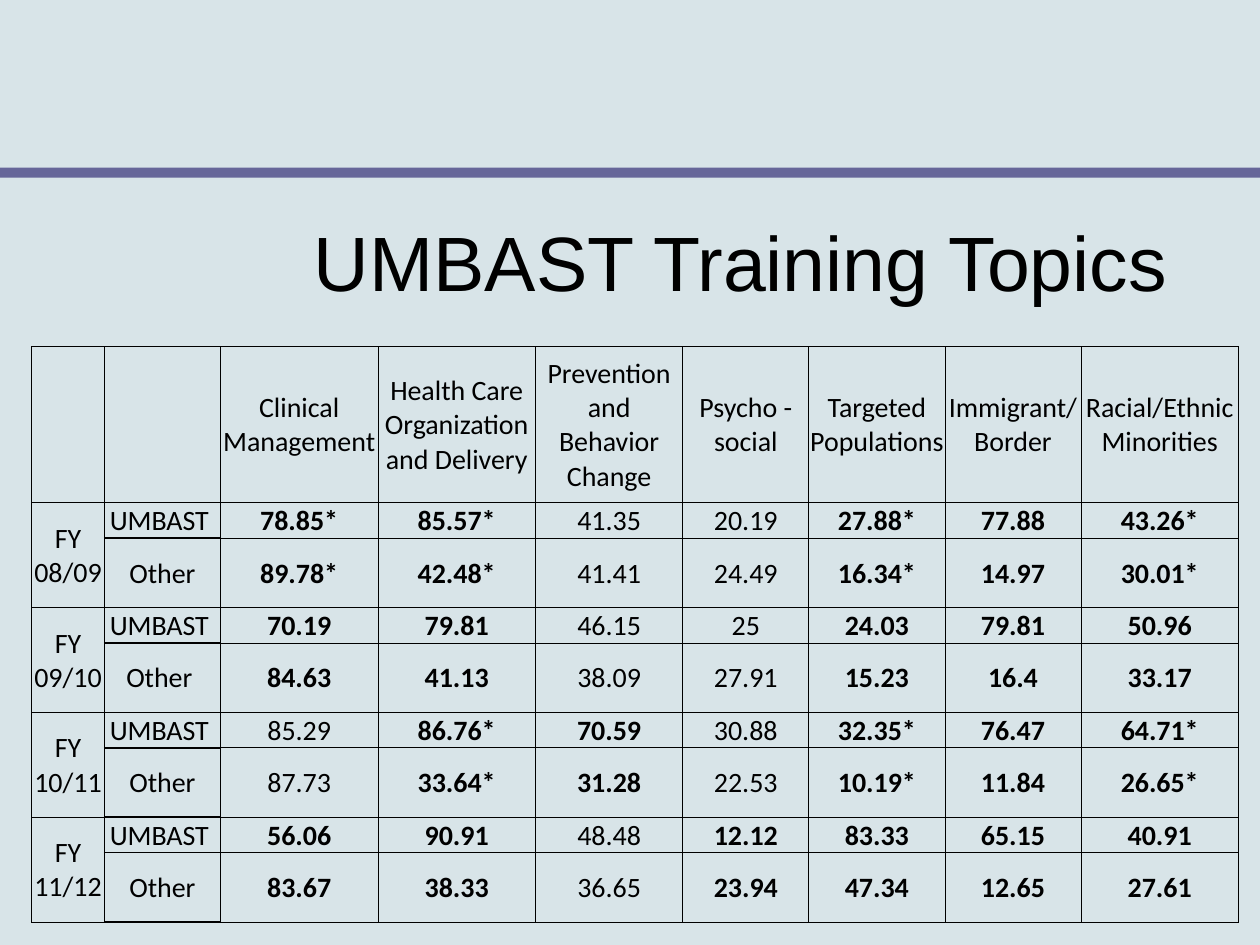
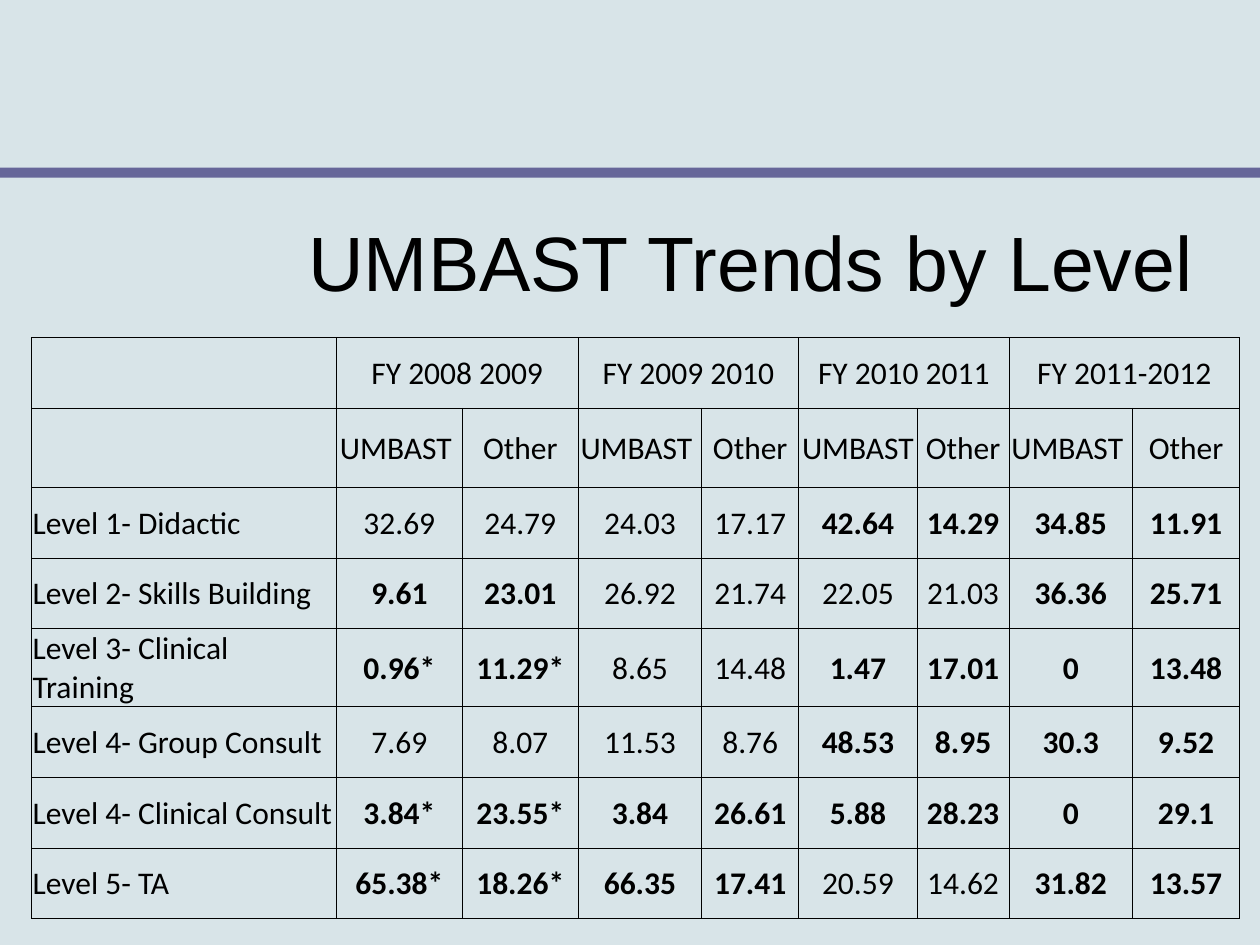
from lxml.etree import SubElement
from pptx import Presentation
from pptx.dml.color import RGBColor as RGB
from pptx.enum.shapes import MSO_SHAPE as SHAPE
from pptx.enum.text import MSO_ANCHOR as ANCHOR, PP_ALIGN as ALIGN
from pptx.oxml.ns import qn
from pptx.util import Inches, Pt

COLORS = {"background": "D8E4E8", "band": "666699", "ink": "000000"}
TITLE_FONT, TABLE_FONT = "Arial", "Calibri"
THIN, THICK = 0.5, 1

TOPICS = ["Clinical Management", "Health Care Organization and Delivery",
          "Prevention and Behavior Change", "Psycho - social",
          "Targeted Populations", "Immigrant/ Border", "Racial/Ethnic Minorities"]

# A leading "!" marks a bold value.
TOPIC_ROWS = [
    ("FY 08/09", "UMBAST ", "!78.85* !85.57* 41.35 20.19 !27.88* !77.88 !43.26*"),
    ("", "Other", "!89.78* !42.48* 41.41 24.49 !16.34* !14.97 !30.01*"),
    ("FY 09/10", "UMBAST ", "!70.19 !79.81 46.15 25 !24.03 !79.81 !50.96"),
    ("", "Other ", "!84.63 !41.13 38.09 27.91 !15.23 !16.4 !33.17"),
    ("FY 10/11", "UMBAST ", "85.29 !86.76* !70.59 30.88 !32.35* !76.47 !64.71*"),
    ("", "Other", "87.73 !33.64* !31.28 22.53 !10.19* !11.84 !26.65*"),
    ("FY 11/12", "UMBAST ", "!56.06 !90.91 48.48 !12.12 !83.33 !65.15 !40.91"),
    ("", "Other", "!83.67 !38.33 36.65 !23.94 !47.34 !12.65 !27.61"),
]

YEARS = ["FY 2008 2009", "FY 2009 2010", "FY 2010 2011", "FY 2011-2012"]

LEVEL_ROWS = [
    ("Level 1- Didactic", "32.69 24.79 24.03 17.17 !42.64 !14.29 !34.85 !11.91"),
    ("Level 2- Skills Building", "!9.61 !23.01 26.92 21.74 22.05 21.03 !36.36 !25.71"),
    ("Level 3- Clinical Training", "!0.96* !11.29* 8.65 14.48 !1.47 !17.01 !0 !13.48"),
    ("Level 4- Group Consult", "7.69 8.07 11.53 8.76 !48.53 !8.95 !30.3 !9.52"),
    ("Level 4- Clinical Consult", "!3.84* !23.55* !3.84 !26.61 !5.88 !28.23 !0 !29.1"),
    ("Level 5- TA", "!65.38* !18.26* !66.35 !17.41 20.59 14.62 !31.82 !13.57"),
]


def write(tf, text, size, font, bold=False, align=ALIGN.CENTER):
    p = tf.paragraphs[0]
    p.alignment = align
    r = p.add_run()
    r.text = text
    r.font.size = Pt(size)
    r.font.name = font
    r.font.bold = bold
    r.font.color.rgb = RGB.from_string(COLORS["ink"])


class Deck:
    def __init__(self):
        self.prs = Presentation()
        self.prs.slide_width, self.prs.slide_height = Inches(10), Inches(7.5)
        self.master = self.prs.slide_master
        fill = self.master.background.fill
        fill.solid()
        fill.fore_color.rgb = RGB.from_string(COLORS["background"])
        self.s = None

    def slide(self, title, left, width):
        first = self.s is None
        self.s = self.prs.slides.add_slide(self.prs.slide_layouts[5])
        if first:
            self.master_band()
        sp = self.s.shapes.title
        sp.left, sp.top = Inches(left), Inches(1.58)
        sp.width, sp.height = Inches(width), Inches(1.25)
        tf = sp.text_frame
        tf.vertical_anchor = ANCHOR.TOP
        tf.margin_top = Inches(0.12)
        write(tf, title, 44, TITLE_FONT)

    def master_band(self):
        sp = self.s.shapes.add_shape(SHAPE.RECTANGLE, 0, Inches(1.33), Inches(10), Inches(0.08))
        sp.shadow.inherit = False
        sp.fill.solid()
        sp.fill.fore_color.rgb = RGB.from_string(COLORS["band"])
        sp.line.fill.background()
        self.master.shapes._spTree.insert(2, sp._element)

    def table(self, top, cols, heights, rows, size, left_col=None, thick_col=None):
        frame = self.s.shapes.add_table(len(rows), len(cols), Inches(0.25), Inches(top),
                                        Inches(sum(cols)), Inches(sum(heights)))
        table = frame.table
        table.first_row = table.horz_banding = False
        for column, width in zip(table.columns, cols):
            column.width = Inches(width)
        for row, height in zip(table.rows, heights):
            row.height = Inches(height)
        for i, values in enumerate(rows):
            for j, value in enumerate(values):
                cell = table.cell(i, j)
                align = ALIGN.LEFT if j == left_col else ALIGN.CENTER
                self.cell(cell, value, size, align)
                widths = dict.fromkeys("LRTB", THIN)
                if j == thick_col:
                    widths.update(L=THICK, T=THICK, B=THICK)
                elif thick_col is not None and j == thick_col - 1:
                    widths["R"] = THICK
                self.borders(cell, widths)
        return table

    def cell(self, cell, value, size, align):
        cell.vertical_anchor = ANCHOR.MIDDLE
        cell.margin_left = cell.margin_right = cell.margin_top = Inches(0.01)
        cell.margin_bottom = 0
        cell.fill.background()
        if value:
            write(cell.text_frame, value.lstrip("!"), size, TABLE_FONT,
                  bold=value.startswith("!"), align=align)

    def borders(self, cell, widths):
        tcPr = cell._tc.get_or_add_tcPr()
        for i, (side, width) in enumerate(widths.items()):
            ln = SubElement(tcPr, qn(f"a:ln{side}"), w=str(Pt(width)))
            fill = SubElement(ln, qn("a:solidFill"))
            SubElement(fill, qn("a:srgbClr"), val=COLORS["ink"])
            tcPr.insert(i, ln)


def training_topics(deck):
    deck.slide("UMBAST Training Topics", 1.92, 7.92)
    rows = [["", "", *TOPICS]]
    rows += [[year, group, *values.split()] for year, group, values in TOPIC_ROWS]
    table = deck.table(2.75, [0.58, 0.92, 1.25, 1.25, 1.17, 1, 1.08, 1.08, 1.25],
                       [1.24] + [0.28, 0.55] * 4, rows, 16, thick_col=1)
    for i in range(1, len(rows), 2):
        table.cell(i, 0).merge(table.cell(i + 1, 0))


def trends_by_level(deck):
    deck.slide("UMBAST Trends by Level", 1.67, 8.58)
    years = [""]
    for year in YEARS:
        years += [year, ""]
    rows = [years, [""] + ["UMBAST ", "Other"] * len(YEARS)]
    rows += [[level, *values.split()] for level, values in LEVEL_ROWS]
    table = deck.table(2.68, [2.42, 1, 0.92, 0.98, 0.77, 0.94, 0.73, 0.98, 0.85],
                       [0.56, 0.63] + [0.56] * len(LEVEL_ROWS), rows, 18, left_col=0)
    for j in range(1, len(years), 2):
        table.cell(0, j).merge(table.cell(0, j + 1))


def main():
    deck = Deck()
    training_topics(deck)
    trends_by_level(deck)
    deck.prs.save("out.pptx")


if __name__ == "__main__":
    main()
